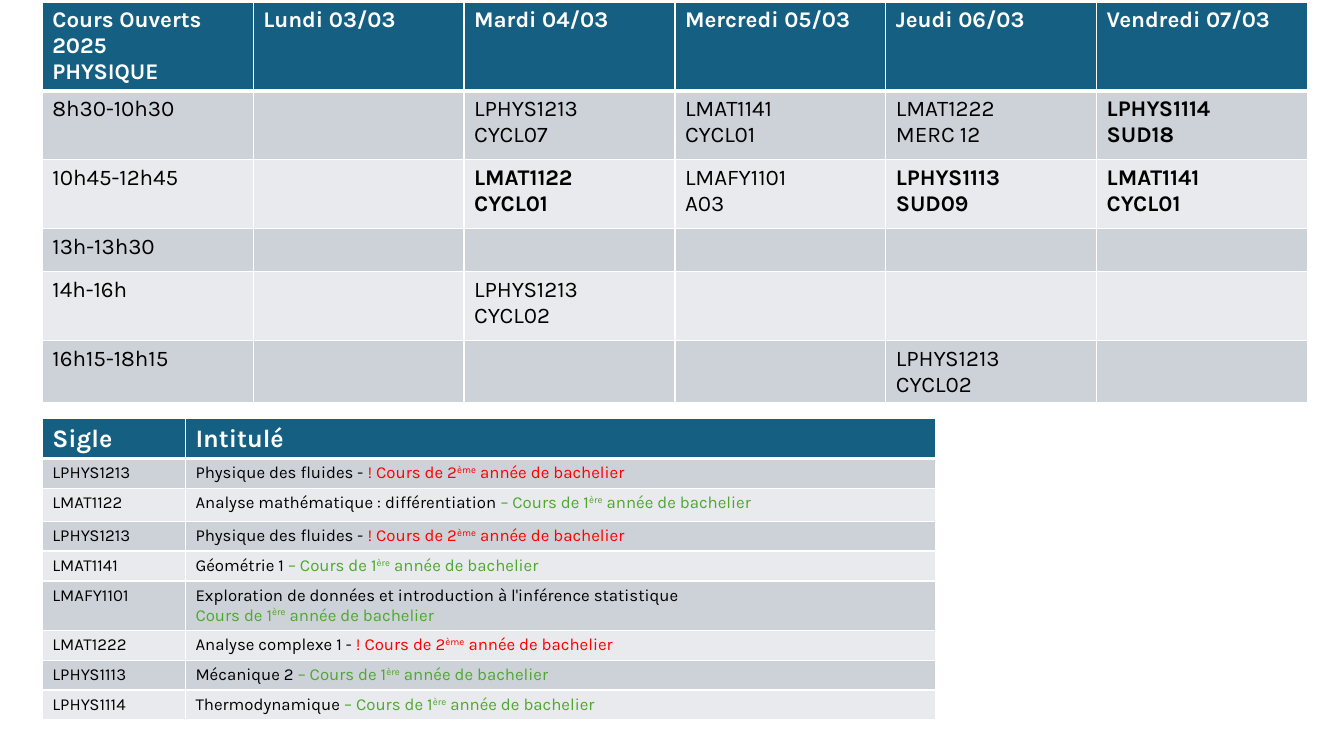
from dataclasses import dataclass
from typing import NamedTuple

from lxml.etree import SubElement
from pptx import Presentation
from pptx.dml.color import RGBColor
from pptx.oxml.ns import qn
from pptx.table import Table, _Cell
from pptx.text.text import _Run
from pptx.util import Inches, Pt

FONT = "Karla"
WHITE, BLACK, HEADER = "FFFFFF", "000000", "156082"
BANDS = ("CCD2D8", "E8EAED")
RED, GREEN = "FF0000", "4EA72E"


class Level(NamedTuple):
    lead: str
    ordinal: str
    color: str


class Course(NamedTuple):
    code: str
    title: str
    level: Level
    split: bool = False  # level goes on a second line


class Lesson(NamedTuple):
    code: str
    room: str
    bold: bool = False


@dataclass
class Grid:
    """Table frame, in percent of the slide's width and height."""
    left: float
    top: float
    columns: list[float]
    rows: list[float]


FIRST = Level("– Cours de 1", "ère", GREEN)
FIRST_PLAIN = Level("Cours de 1", "ère", GREEN)
SECOND = Level("! Cours de 2", "ème", RED)

DAYS = ["Cours Ouverts 2025\nPHYSIQUE", "Lundi 03/03", "Mardi 04/03",
        "Mercredi 05/03", "Jeudi 06/03", "Vendredi 07/03"]
HOURS = ["8h30-10h30", "10h45-12h45", "13h-13h30", "14h-16h", "16h15-18h15"]

# Lessons by (hour row, day column)
LESSONS = {
    (1, 2): Lesson("LPHYS1213", "CYCL07"),
    (1, 3): Lesson("LMAT1141", "CYCL01"),
    (1, 4): Lesson("LMAT1222", "MERC 12"),
    (1, 5): Lesson("LPHYS1114", "SUD18", True),
    (2, 2): Lesson("LMAT1122", "CYCL01", True),
    (2, 3): Lesson("LMAFY1101", "A03"),
    (2, 4): Lesson("LPHYS1113", "SUD09", True),
    (2, 5): Lesson("LMAT1141", "CYCL01", True),
    (4, 2): Lesson("LPHYS1213", "CYCL02"),
    (5, 4): Lesson("LPHYS1213", "CYCL02"),
}

COURSES = [
    Course("LPHYS1213", "Physique des fluides - ", SECOND),
    Course("LMAT1122", "Analyse mathématique : différentiation ", FIRST),
    Course("LPHYS1213", "Physique des fluides - ", SECOND),
    Course("LMAT1141", "Géométrie 1 ", FIRST),
    Course("LMAFY1101", "Exploration de données et introduction à "
           "l'inférence statistique", FIRST_PLAIN, True),
    Course("LMAT1222", "Analyse complexe 1 - ", SECOND),
    Course("LPHYS1113", "Mécanique 2 ", FIRST),
    Course("LPHYS1114", "Thermodynamique ", FIRST),
]

WEEK_GRID = Grid(3.15, 0.27, [15.69] * len(DAYS),
                 [11.67, 9.12, 9.12, 5.69, 9.12, 8.2])
COURSE_GRID = Grid(3.15, 55.4, [10.65, 55.81],
                   [5.2, 3.95, 4.35, 3.95, 3.95, 6.55, 3.95, 3.95, 3.95])

deck = Presentation()
deck.slide_width, deck.slide_height = Inches(13.33), Inches(7.5)
slide = deck.slides.add_slide(deck.slide_layouts[6])


def across(percent: float) -> int:
    return int(deck.slide_width * percent / 100)


def down(percent: float) -> int:
    return int(deck.slide_height * percent / 100)


def rgb(color: str) -> RGBColor:
    return RGBColor.from_string(color)


def style_run(run: _Run, size: float, color: str = BLACK, bold: bool = False) -> None:
    run.font.name, run.font.size, run.font.bold = FONT, Pt(size), bold
    run.font.color.rgb = rgb(color)


def write(cell: _Cell, text: str, size: float, color: str = BLACK,
          bold: bool = False) -> None:
    cell.text_frame.text = text
    for paragraph in cell.text_frame.paragraphs:
        for run in paragraph.runs:
            style_run(run, size, color, bold)


def paint(cell: _Cell, color: str, bottom: float) -> None:
    """White borders first, then the fill, as the cell schema requires."""
    properties = cell._tc.get_or_add_tcPr()
    for side, width in zip("LRTB", (1, 1, 1, bottom)):
        line = SubElement(properties, qn(f"a:ln{side}"), w=str(Pt(width)))
        fill = SubElement(line, qn("a:solidFill"))
        SubElement(fill, qn("a:srgbClr"), val=WHITE)
    cell.fill.solid()
    cell.fill.fore_color.rgb = rgb(color)


def add_grid(grid: Grid, headings: list[str], size: float) -> Table:
    table = slide.shapes.add_table(
        len(grid.rows), len(grid.columns), across(grid.left), down(grid.top),
        across(sum(grid.columns)), down(sum(grid.rows))).table
    table.horz_banding = False
    for column, width in zip(table.columns, grid.columns):
        column.width = across(width)
    for number, (row, height) in enumerate(zip(table.rows, grid.rows)):
        row.height = down(height)
        for cell in row.cells:
            if number:
                paint(cell, BANDS[(number - 1) % 2], 1)
            else:
                paint(cell, HEADER, 3)
    for column, heading in enumerate(headings):
        write(table.cell(0, column), heading, size, WHITE, True)
    return table


def write_course(cell: _Cell, course: Course, size: float) -> None:
    paragraph = cell.text_frame.paragraphs[0]
    level = course.level
    pieces = [(course.title, BLACK), (level.lead, level.color),
              (level.ordinal, level.color), (" année de bachelier", level.color)]
    for position, (text, color) in enumerate(pieces):
        if position == 1 and course.split:
            paragraph.add_line_break()
        run = paragraph.add_run()
        run.text = text
        style_run(run, size, color)
        if text == level.ordinal:
            run.font._element.set("baseline", "30000")


# Weekly timetable
week = add_grid(WEEK_GRID, DAYS, 16)
for row, hour in enumerate(HOURS, 1):
    write(week.cell(row, 0), hour, 16)
for (row, day), lesson in LESSONS.items():
    write(week.cell(row, day), f"{lesson.code}\v{lesson.room}", 16, bold=lesson.bold)

# Course titles
catalogue = add_grid(COURSE_GRID, ["Sigle", "Intitulé"], 18)
for row, course in enumerate(COURSES, 1):
    write(catalogue.cell(row, 0), course.code, 12)
    write_course(catalogue.cell(row, 1), course, 12)

deck.save("out.pptx")
